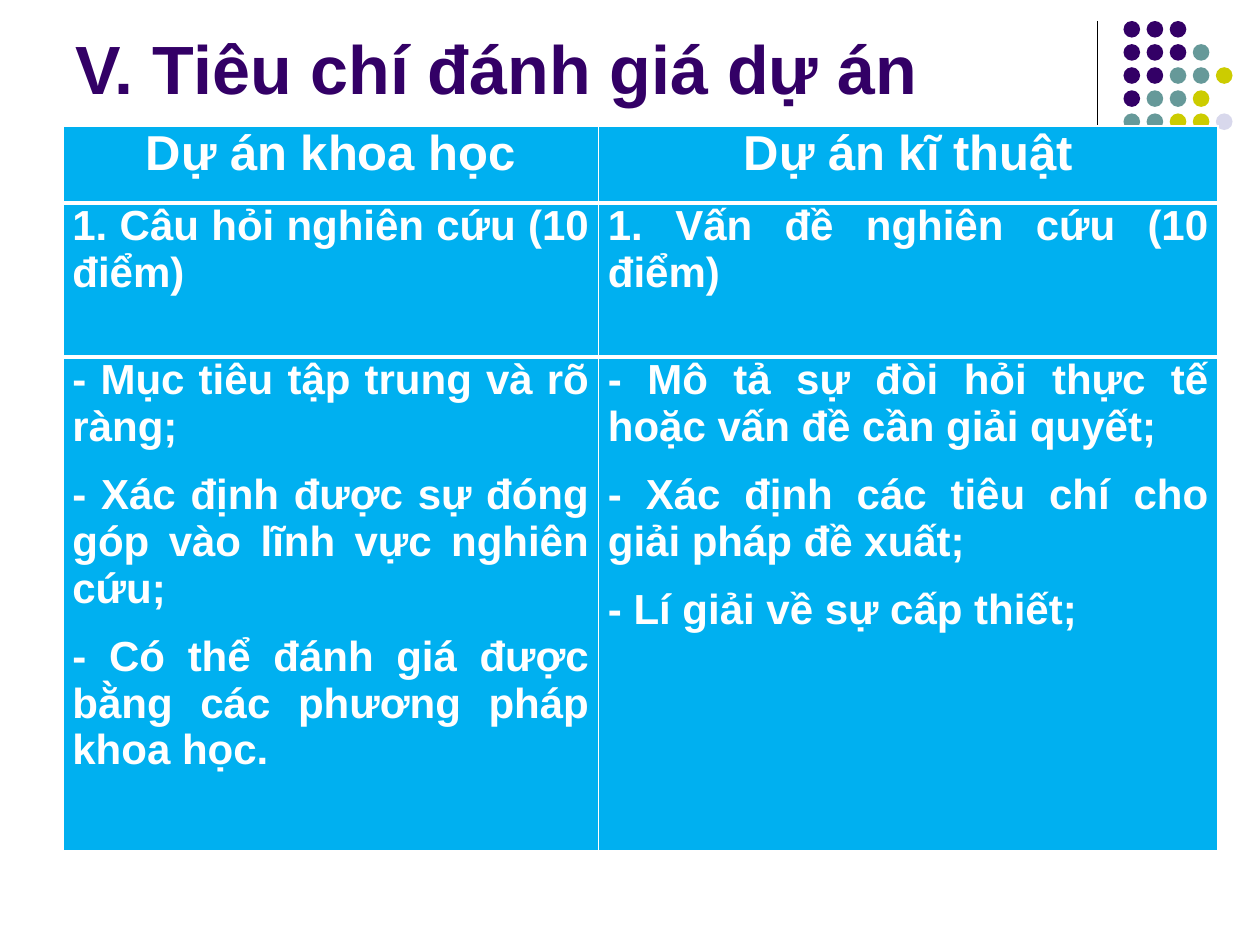
import pptx
import pptx.dml.color
import pptx.enum.shapes
import pptx.enum.text
import pptx.oxml
import pptx.oxml.ns
import pptx.util

Pt = pptx.util.Pt
ALIGN = pptx.enum.text.PP_ALIGN
COLORS = {
    "purple": "330066",
    "teal": "669999",
    "olive": "CCCC00",
    "lilac": "D8D8EC",
    "cell": "00B0F0",
    "white": "FFFFFF",
    "black": "000000",
}
DOT_COLORS = {"p": "purple", "t": "teal", "o": "olive", "l": "lilac"}
DOT_ROWS = ["ppp", "pppt", "pptto", "ptto", "ttool"]
HEADINGS = ["Dự án khoa học", "Dự án kĩ thuật"]
QUESTIONS = ["1. Câu hỏi nghiên cứu (10 điểm)", "1. Vấn đề nghiên cứu (10 điểm)"]
SCIENCE_CRITERIA = [
    "- Mục tiêu tập trung và rõ ràng;",
    "- Xác định được sự đóng góp vào lĩnh vực nghiên cứu;",
    "- Có thể đánh giá được bằng các phương pháp khoa học.",
]
ENGINEERING_CRITERIA = [
    "- Mô tả sự đòi hỏi thực tế hoặc vấn đề cần giải quyết;",
    "- Xác định các tiêu chí cho giải pháp đề xuất;",
    "- Lí giải về sự cấp thiết;",
]


def rgb(name):
    return pptx.dml.color.RGBColor.from_string(COLORS[name])


def write(frame, lines, size=24, color="white", align=ALIGN.JUSTIFY, gap=6, font="Arial"):
    for index, line in enumerate(lines):
        paragraph = frame.add_paragraph() if index else frame.paragraphs[0]
        paragraph.alignment = align
        paragraph.space_before = paragraph.space_after = Pt(gap)
        run = paragraph.add_run()
        run.text = line
        run.font.name = font
        run.font.size = Pt(size)
        run.font.bold = True
        run.font.color.rgb = rgb(color)


class CriteriaSlide:
    def __init__(self, deck):
        self.slide = deck.slides.add_slide(deck.slide_layouts[5])
        self.shapes = self.slide.shapes

    def title(self, text, left, top, width, height):
        heading = self.shapes.title
        heading.left, heading.top = Pt(left), Pt(top)
        heading.width, heading.height = Pt(width), Pt(height)
        frame = heading.text_frame
        frame.auto_size = pptx.enum.text.MSO_AUTO_SIZE.NONE
        frame.vertical_anchor = pptx.enum.text.MSO_ANCHOR.BOTTOM
        write(frame, [text], size=39, color="purple", align=ALIGN.LEFT, gap=0)

    def vertical_rule(self, x, top, bottom):
        rule = self.shapes.add_connector(
            pptx.enum.shapes.MSO_CONNECTOR.STRAIGHT, Pt(x), Pt(top), Pt(x), Pt(bottom))
        rule.line.color.rgb = rgb("black")
        rule.line.width = Pt(0.75)
        rule.element.spPr.append(pptx.oxml.parse_xml(
            f'<a:effectLst {pptx.oxml.ns.nsdecls("a")}/>'))

    def dots(self, rows, left, top, pitch, size):
        cluster = self.shapes.add_group_shape()
        for row, letters in enumerate(rows):
            for column, letter in enumerate(letters):
                dot = cluster.shapes.add_shape(
                    pptx.enum.shapes.MSO_SHAPE.OVAL,
                    Pt(left + column * pitch), Pt(top + row * pitch), Pt(size), Pt(size))
                dot.shadow.inherit = False
                dot.fill.solid()
                dot.fill.fore_color.rgb = rgb(DOT_COLORS[letter])
                dot.line.fill.background()

    def table(self, contents, left, top, widths, heights):
        grid = self.shapes.add_table(
            len(heights), len(widths), Pt(left), Pt(top),
            Pt(sum(widths)), Pt(sum(heights))).table
        for column, width in zip(grid.columns, widths):
            column.width = Pt(width)
        for row, height in zip(grid.rows, heights):
            row.height = Pt(height)
        last = len(heights) - 1
        for r, row in enumerate(contents):
            for c, lines in enumerate(row):
                cell = grid.cell(r, c)
                cell.margin_left = cell.margin_right = Pt(5.4)
                cell.margin_top = cell.margin_bottom = 0
                self.borders(cell, L=1, R=1, T=3 if r else 1, B=3 if r < last else 1)
                cell.fill.solid()
                cell.fill.fore_color.rgb = rgb("cell")
                if r == 0:
                    write(cell.text_frame, lines, size=28, align=ALIGN.CENTER)
                else:
                    write(cell.text_frame, lines)

    def borders(self, cell, **widths):
        properties = cell._tc.get_or_add_tcPr()
        for side, width in widths.items():
            properties.append(pptx.oxml.parse_xml(
                f'<a:ln{side} {pptx.oxml.ns.nsdecls("a")} w="{Pt(width)}"><a:solidFill>'
                f'<a:srgbClr val="{COLORS["white"]}"/></a:solidFill></a:ln{side}>'))


def main():
    deck = pptx.Presentation()
    deck.slide_width, deck.slide_height = Pt(720), Pt(540)
    criteria = CriteriaSlide(deck)
    criteria.vertical_rule(627, 12, 132)
    criteria.dots(DOT_ROWS, left=642, top=12, pitch=13.2, size=9.5)
    criteria.title("V. Tiêu chí đánh giá dự án", 36, 9.5, 594, 56)
    criteria.table(
        [[[heading] for heading in HEADINGS],
         [[question] for question in QUESTIONS],
         [SCIENCE_CRITERIA, ENGINEERING_CRITERIA]],
        left=36, top=72, widths=[306, 354], heights=[44, 88, 282])
    deck.save("out.pptx")


if __name__ == "__main__":
    main()
